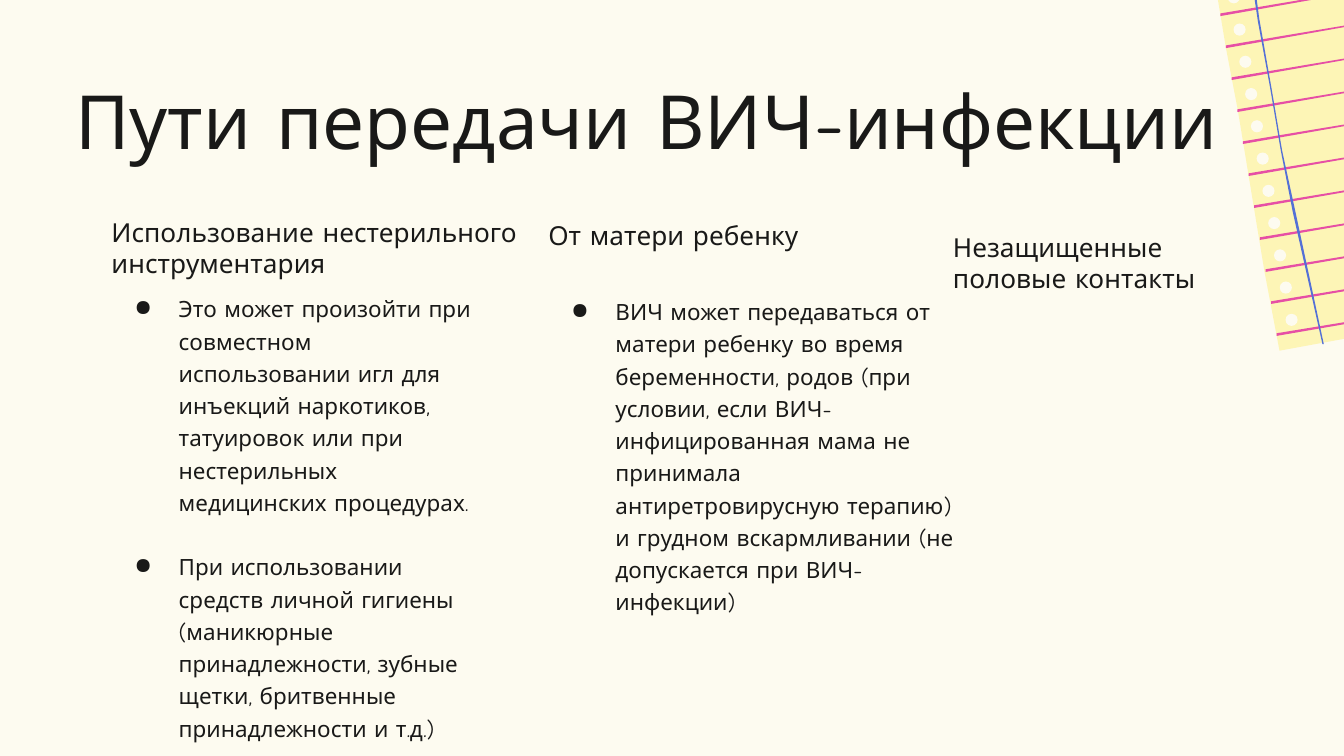
from lxml.etree import SubElement
from pptx import Presentation
from pptx.dml.color import RGBColor
from pptx.enum.shapes import MSO_SHAPE
from pptx.enum.text import MSO_ANCHOR, MSO_AUTO_SIZE, PP_ALIGN
from pptx.oxml.ns import qn
from pptx.util import Inches, Pt

FONT = "Comic Neue"
CREAM = RGBColor(0xFD, 0xFB, 0xF0)
INK = RGBColor(0x19, 0x19, 0x18)
PAPER = RGBColor(0xFD, 0xF5, 0xB6)
PINK = RGBColor(0xE6, 0x4F, 0xA5)
BLUE = RGBColor(0x54, 0x70, 0xD6)

# Column headings: text, box
HEADINGS = [
    ("Использование нестерильного инструментария", (0.83, 1.61, 3.06, 0.47)),
    ("От матери ребенку", (4.08, 1.63, 2.81, 0.24)),
    ("Незащищенные половые контакты", (7.09, 1.72, 2.32, 0.47)),
]
# Bulleted lists: paragraphs, box
LISTS = [
    (["Это может произойти при совместном использовании игл для инъекций "
      "наркотиков, татуировок или при нестерильных медицинских процедурах.",
      "При использовании средств личной гигиены (маникюрные принадлежности, "
      "зубные щетки, бритвенные принадлежности и т.д.)"],
     (0.83, 2.16, 2.81, 3.39)),
    (["ВИЧ может передаваться от матери ребенку во время беременности, родов "
      "(при условии, если ВИЧ-инфицированная мама не принимала "
      "антиретровирусную терапию) и грудном вскармливании (не допускается "
      "при ВИЧ-инфекции)"],
     (4.08, 2.18, 3.03, 2.42)),
]

# Notebook sheet, tilted and running off the top right corner
SHEET = [(9.02, -0.25), (9.78, -0.4), (10.43, -0.53), (11.06, -0.65),
         (11.35, 0.69), (11.4, 0.93), (11.54, 1.64), (11.64, 2.13),
         (11.63, 2.22), (11.26, 2.3), (10.99, 2.34), (9.52, 2.61),
         (9.41, 2.03), (9.37, 1.79), (9.21, 0.82), (9.12, 0.35)]
MARGIN_LINE = [(9.29, -0.31), (9.36, 0.16), (9.45, 0.65), (9.53, 1.12),
               (9.62, 1.58), (9.84, 2.56), (9.85, 2.56), (9.64, 1.58),
               (9.54, 1.12), (9.46, 0.65), (9.37, 0.14), (9.31, -0.31)]
ROW_COUNT = 11
LINE_THICKNESS = 0.02


def style_font(font, size):
    font.name = FONT
    font.size = Pt(size)
    font.color.rgb = INK


def place_text(shape, box, paragraphs, size):
    """Position a text shape and fill it with plain paragraphs."""
    shape.left, shape.top, shape.width, shape.height = map(Inches, box)
    frame = shape.text_frame
    frame.margin_left = frame.margin_right = 0
    frame.margin_top = frame.margin_bottom = 0
    frame.word_wrap = True
    frame.auto_size = MSO_AUTO_SIZE.SHAPE_TO_FIT_TEXT
    frame.vertical_anchor = MSO_ANCHOR.TOP
    frame.text = "\n".join(paragraphs)
    for paragraph in frame.paragraphs:
        paragraph.alignment = PP_ALIGN.LEFT
        for run in paragraph.runs:
            style_font(run.font, size)
    return frame


def add_text(slide, box, paragraphs, size):
    shape = slide.shapes.add_textbox(*map(Inches, box))
    return place_text(shape, box, paragraphs, size)


def add_bullet(paragraph, size):
    properties = paragraph._p.get_or_add_pPr()
    properties.set("marL", str(Inches(0.5)))
    properties.set("indent", str(Inches(-0.33)))
    color = SubElement(properties, qn("a:buClr"))
    SubElement(color, qn("a:srgbClr")).set("val", str(INK))
    SubElement(properties, qn("a:buChar")).set("char", "●")
    # The bullet takes its size from the paragraph
    style_font(paragraph.font, size)
    end = SubElement(paragraph._p, qn("a:endParaRPr"))
    end.set("sz", str(size * 100))


def add_bullet_list(slide, box, items):
    frame = add_text(slide, box, items, 12)
    for index, paragraph in enumerate(frame.paragraphs):
        add_bullet(paragraph, 12)
        paragraph.line_spacing = 1.2
        if index:
            paragraph.space_before = Pt(17.4)


def paint(shape, color):
    shape.shadow.inherit = False
    shape.fill.solid()
    shape.fill.fore_color.rgb = color
    shape.line.fill.background()


def add_outline(shapes, points, color):
    start, *rest = [(Inches(x), Inches(y)) for x, y in points]
    builder = shapes.build_freeform(*start)
    builder.add_line_segments(rest, close=True)
    paint(builder.convert_to_shape(), color)


def add_hole(shapes, center_x, center_y, diameter=0.09):
    radius = diameter / 2
    hole = shapes.add_shape(
        MSO_SHAPE.OVAL, Inches(center_x - radius), Inches(center_y - radius),
        Inches(diameter), Inches(diameter))
    paint(hole, CREAM)


def spread(first, last):
    """Evenly spaced values, one for each row of the sheet."""
    step = (last - first) / (ROW_COUNT - 1)
    return [first + row * step for row in range(ROW_COUNT)]


def add_notebook_sheet(slide):
    shapes = slide.shapes.add_group_shape().shapes
    add_outline(shapes, SHEET, PAPER)
    for x, y in zip(spread(9.18, 9.61), spread(-0.02, 2.38)):
        add_hole(shapes, x, y)
    # Ruled lines, each a thin wedge
    for left, left_y, right, right_y in zip(
            spread(9.08, 9.5), spread(0.12, 2.5),
            spread(11.16, 11.64), spread(-0.25, 2.13)):
        add_outline(shapes, [(left, left_y - LINE_THICKNESS),
                             (right, right_y), (left, left_y)], PINK)
    add_outline(shapes, MARGIN_LINE, BLUE)


def main():
    presentation = Presentation()
    presentation.slide_width = Inches(10)
    presentation.slide_height = Inches(10 * 9 / 16)
    slide = presentation.slides.add_slide(presentation.slide_layouts[5])
    slide.background.fill.solid()
    slide.background.fill.fore_color.rgb = CREAM

    # Title and text columns
    place_text(slide.shapes.title, (0.56, 0.56, 8.8, 0.67),
               ["Пути передачи ВИЧ-инфекции"], 40)
    for items, box in LISTS:
        add_bullet_list(slide, box, items)
    for heading, box in HEADINGS:
        add_text(slide, box, [heading], 14)

    # Corner decoration
    add_notebook_sheet(slide)
    presentation.save("out.pptx")


if __name__ == "__main__":
    main()
